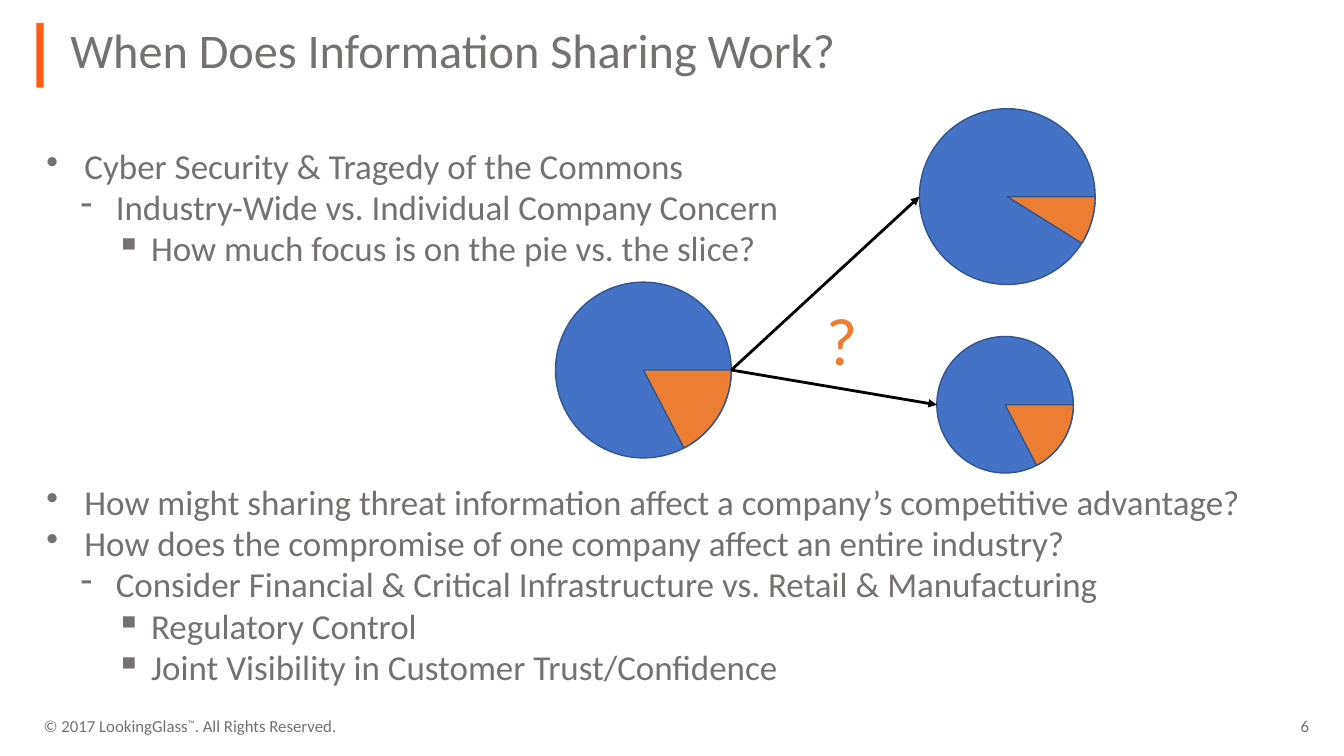
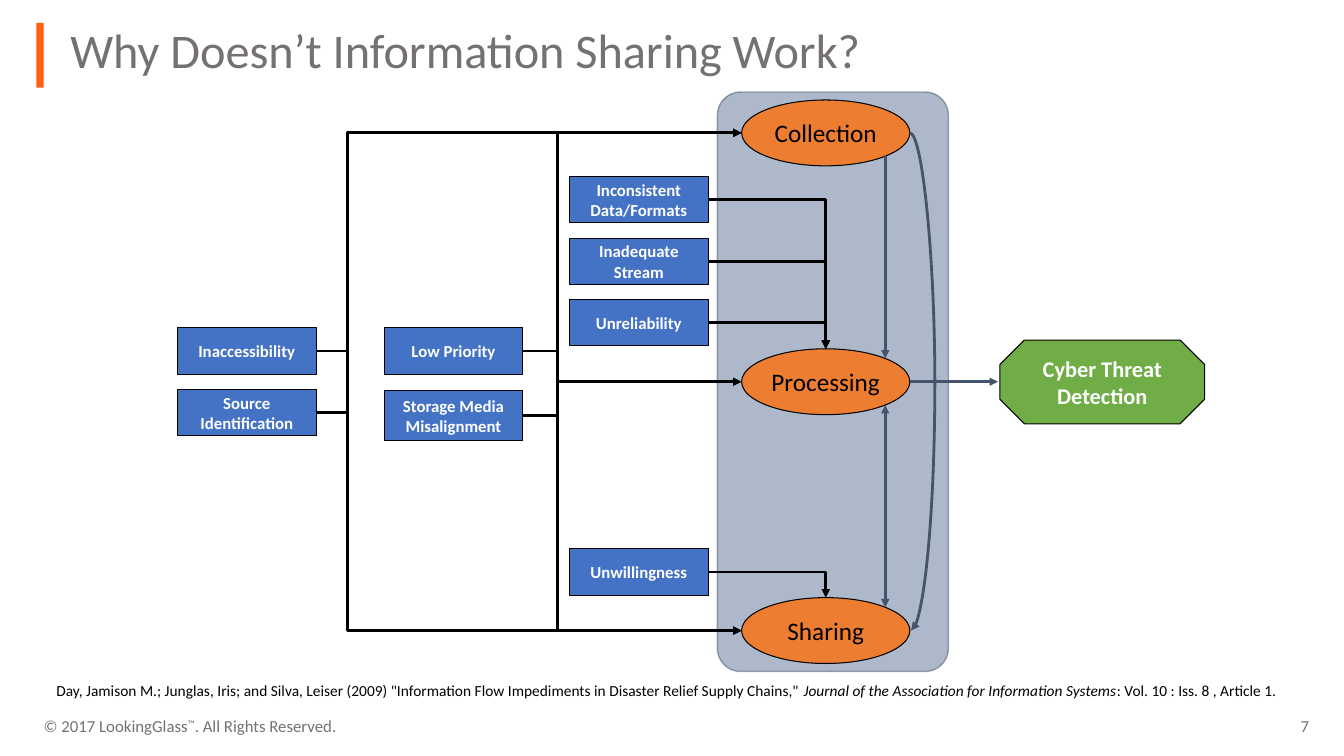
import math

from lxml import etree
from pptx import Presentation
from pptx.dml.color import RGBColor
from pptx.enum.shapes import MSO_CONNECTOR, MSO_SHAPE
from pptx.enum.text import MSO_ANCHOR, MSO_AUTO_SIZE, PP_ALIGN
from pptx.oxml.ns import qn
from pptx.util import Cm, Pt

RECT, ROUNDED, OVAL = MSO_SHAPE.RECTANGLE, MSO_SHAPE.ROUNDED_RECTANGLE, MSO_SHAPE.OVAL
PIE, OCTAGON = MSO_SHAPE.PIE, MSO_SHAPE.OCTAGON
STRAIGHT, ELBOW, CURVE = MSO_CONNECTOR.STRAIGHT, MSO_CONNECTOR.ELBOW, MSO_CONNECTOR.CURVE
LEFT, CENTER, RIGHT = PP_ALIGN.LEFT, PP_ALIGN.CENTER, PP_ALIGN.RIGHT
TOP, MIDDLE = MSO_ANCHOR.TOP, MSO_ANCHOR.MIDDLE
NO_AUTOSIZE = MSO_AUTO_SIZE.NONE

FONT = "Calibri"
COLORS = {
    "accent": "FF5D12", "gray": "767171", "blue": "4472C4", "blue_edge": "325491",
    "orange": "ED7D31", "green": "70AD47", "band": "ADB9CA", "slate": "44546A",
    "black": "000000", "white": "FFFFFF",
}
BULLETS = [("•", 0.96, -0.96), ("-", 1.75, -0.89), ("▪", 2.64, -0.89)]

COMMONS_POINTS = [
    (0, "Cyber Security & Tragedy of the Commons"),
    (1, "Industry-Wide vs. Individual Company Concern"),
    (2, "How much focus is on the pie vs. the slice?"),
]
IMPACT_POINTS = [
    (0, "How might sharing threat information affect a company’s competitive advantage?"),
    (0, "How does the compromise of one company affect an entire industry?"),
    (1, "Consider Financial & Critical Infrastructure vs. Retail & Manufacturing"),
    (2, "Regulatory Control"),
    (2, "Joint Visibility in Customer Trust/Confidence"),
]
CITATION = [
    ("Day, Jamison M.; Junglas, Iris; and Silva, Leiser (2009) \"Information Flow "
     "Impediments in Disaster Relief Supply Chains,\" ", False),
    ("Journal of the Association for Information Systems", True),
    (": Vol. 10 : Iss. 8 , Article 1.", False),
]


def rgb(name):
    """Return the named colour."""
    return RGBColor.from_string(COLORS[name])


def style(paragraph, size, color, bold=False, align=LEFT):
    """Format a whole paragraph."""
    paragraph.alignment = align
    font = paragraph.font
    font.name, font.size, font.bold = FONT, Pt(size), bold
    font.color.rgb = rgb(color)


def text_frame(slide, left, top, width, height, inset=None):
    """Add a wrapping text box and return its frame."""
    frame = slide.shapes.add_textbox(Cm(left), Cm(top), Cm(width), Cm(height)).text_frame
    frame.word_wrap = True
    if inset is not None:
        frame.margin_left = frame.margin_right = Cm(inset)
        frame.margin_top = frame.margin_bottom = Cm(inset)
    return frame


def add_shape(slide, kind, box, fill, edge=None, weight=0.75):
    """Add a flat preset shape in a box given in centimetres."""
    shape = slide.shapes.add_shape(kind, *map(Cm, box))
    shape.shadow.inherit = False
    shape.fill.solid()
    shape.fill.fore_color.rgb = rgb(fill)
    if edge:
        shape.line.color.rgb = rgb(edge)
        shape.line.width = Pt(weight)
    else:
        shape.line.fill.background()
    return shape


def add_node(slide, kind, box, fill, lines, size, color, bold=True):
    """Add a diagram shape with centred lines of text."""
    frame = add_shape(slide, kind, box, fill, "black").text_frame
    frame.word_wrap = False
    frame.vertical_anchor = MIDDLE
    for index, line in enumerate(lines):
        paragraph = frame.paragraphs[0] if index == 0 else frame.add_paragraph()
        paragraph.text = line
        style(paragraph, size, color, bold, CENTER)


def add_arrow(slide, start, end, color="black", kind=STRAIGHT, bend_x=None, both=False):
    """Draw an arrow; an elbow without bend_x turns one corner."""
    arrow = slide.shapes.add_connector(kind, *map(Cm, (*start, *end)))
    arrow.line.color.rgb = rgb(color)
    arrow.line.width = Pt(2)
    properties = arrow._element.spPr
    line = properties.find(qn("a:ln"))
    for tag in ["a:headEnd", "a:tailEnd"] if both else ["a:tailEnd"]:
        etree.SubElement(line, qn(tag), type="triangle")
    etree.SubElement(properties, qn("a:effectLst"))
    geometry = properties.find(qn("a:prstGeom"))
    if bend_x is not None:
        ratio = (bend_x - start[0]) / (end[0] - start[0])
        guides = geometry.find(qn("a:avLst"))
        if guides is None:
            guides = etree.SubElement(geometry, qn("a:avLst"))
        etree.SubElement(guides, qn("a:gd"), name="adj1", fmla=f"val {round(ratio * 100000)}")
    elif kind == ELBOW:
        geometry.set("prst", "bentConnector2")


def add_framed_slide(prs, title, number):
    """Add a slide with title, accent bar and footer."""
    slide = prs.slides.add_slide(prs.slide_layouts[5])
    add_shape(slide, RECT, (0.92, 0.58, 0.18, 1.63), "accent")

    heading = slide.shapes.title
    heading.left, heading.top, heading.width, heading.height = map(Cm, (1.52, 0.56, 31.72, 1.75))
    frame = heading.text_frame
    frame.text = title
    frame.auto_size = NO_AUTOSIZE
    frame.vertical_anchor = TOP
    frame.paragraphs[0].line_spacing = 0.9
    style(frame.paragraphs[0], 34.5, "gray")

    notice = text_frame(slide, 1.02, 17.96, 10, 0.61, 0.08).paragraphs[0]
    for text in ("© 2017 LookingGlass", "™", ". All Rights Reserved."):
        run = notice.add_run()
        run.text = text
        if text == "™":
            run._r.get_or_add_rPr().set("baseline", "30000")
    style(notice, 12, "gray")

    page = text_frame(slide, 28.5, 17.96, 4.57, 0.61, 0.08).paragraphs[0]
    page.text = str(number)
    style(page, 12, "gray", align=RIGHT)
    return slide


def add_bullets(slide, box, points):
    """Add a bulleted list of (level, text) points."""
    frame = text_frame(slide, *box)
    for index, (level, text) in enumerate(points):
        paragraph = frame.paragraphs[0] if index == 0 else frame.add_paragraph()
        paragraph.text = text
        paragraph.level = level
        mark, margin, indent = BULLETS[level]
        properties = paragraph._p.get_or_add_pPr()
        properties.set("marL", str(Cm(margin)))
        properties.set("indent", str(Cm(indent)))
        etree.SubElement(properties, qn("a:buChar"), char=mark)
        paragraph.line_spacing = 0.9
        paragraph.space_after = Pt(2.5)
        style(paragraph, 25, "gray")


def add_pie(slide, left, top, size, degrees):
    """Draw a disc with a slice that starts at three o'clock."""
    box = (left, top, size, size)
    add_shape(slide, OVAL, box, "blue", "blue_edge", 1)
    portion = add_shape(slide, PIE, box, "orange", "blue_edge", 1)
    portion.adjustments[0] = 0
    portion.adjustments[1] = degrees * 0.6


def add_pie_choice(slide, left, top):
    """Draw one pie leading to a larger pie or a larger slice."""
    large, small = 4.43, 3.44
    current_y, bigger_pie_x, smaller_pie_x, smaller_pie_y = 4.37, 9.17, 9.61, 5.74
    add_pie(slide, left, top + current_y, large, 62.5)
    add_pie(slide, left + bigger_pie_x, top, large, 32)
    add_pie(slide, left + smaller_pie_x, top + smaller_pie_y, small, 62.5)
    origin = (left + large, top + current_y + large / 2)
    add_arrow(slide, origin, (left + bigger_pie_x, top + large / 2))
    add_arrow(slide, origin, (left + smaller_pie_x, top + smaller_pie_y + small / 2))
    question = text_frame(slide, left + 6.58, top + 4.65, 1.68, 2.31).paragraphs[0]
    question.text = "?"
    style(question, 48, "orange")


def add_flow(slide, left, top):
    """Draw the impediments that act on the stages of threat detection."""
    band = add_shape(slide, ROUNDED, (left + 13.61, top, 5.82, 14.6), "band", "slate", 1)
    band.adjustments[0] = 0.1
    edge_color = band._element.spPr.find(qn("a:ln")).find(".//" + qn("a:srgbClr"))
    etree.SubElement(edge_color, qn("a:alpha"), val="50000")

    stage_x, stage_w, stage_h = left + 14.22, 4.24, 1.66
    center_x, stage_right = stage_x + stage_w / 2, stage_x + stage_w
    tops = [top + 0.2 + 6.27 * row for row in range(3)]
    for stage, stage_y in zip(("Collection", "Processing", "Sharing"), tops):
        add_node(slide, OVAL, (stage_x, stage_y, stage_w, stage_h), "orange",
                 [stage], 18, "black", False)
    collection_y, processing_y, sharing_y = [y + stage_h / 2 for y in tops]

    columns = [left, left + 5.21, left + 9.88]
    cause_w, cause_h = 3.5, 1.17
    causes = [
        (0, 5.94, cause_h, ["Inaccessibility"]),
        (0, 7.49, cause_h, ["Source", "Identification"]),
        (1, 5.94, cause_h, ["Low Priority"]),
        (1, 7.52, 1.27, ["Storage Media", "Misalignment"]),
        (2, 2.13, cause_h, ["Inconsistent", "Data/Formats"]),
        (2, 3.68, cause_h, ["Inadequate", "Stream"]),
        (2, 5.23, cause_h, ["Unreliability"]),
        (2, 11.51, cause_h, ["Unwillingness"]),
    ]
    exits = {}
    for column, offset, height, lines in causes:
        box = (columns[column], top + offset, cause_w, height)
        add_node(slide, RECT, box, "blue", lines, 12, "white")
        exits[lines[0]] = (columns[column] + cause_w, top + offset + height / 2)

    outer_bus, inner_bus = left + 4.29, left + 9.58
    for cause, bus, stage_y in (
        ("Inaccessibility", outer_bus, sharing_y),
        ("Source", outer_bus, collection_y),
        ("Low Priority", inner_bus, sharing_y),
        ("Low Priority", inner_bus, processing_y),
        ("Storage Media", inner_bus, collection_y),
    ):
        add_arrow(slide, exits[cause], (stage_x, stage_y), kind=ELBOW, bend_x=bus)
    for cause, stage_top in (
        ("Inconsistent", tops[1]), ("Inadequate", tops[1]),
        ("Unreliability", tops[1]), ("Unwillingness", tops[2]),
    ):
        add_arrow(slide, exits[cause], (center_x, stage_top), kind=ELBOW)

    detection_x = left + 20.73
    add_node(slide, OCTAGON, (detection_x, top + 6.25, 5.16, 2.11), "green",
             ["Cyber Threat", "Detection"], 16, "white")
    add_arrow(slide, (stage_right, processing_y), (detection_x - 0.05, processing_y), "slate")

    diagonal = math.sqrt(0.5)
    rim_x, rim_y = center_x + stage_w / 2 * diagonal, stage_h / 2 * diagonal
    add_arrow(slide, (rim_x, collection_y + rim_y), (rim_x, processing_y - rim_y), "slate")
    add_arrow(slide, (rim_x, sharing_y - rim_y), (rim_x, processing_y + rim_y), "slate", both=True)
    add_arrow(slide, (stage_right, collection_y), (stage_right + 0.03, sharing_y), "slate",
              CURVE, stage_right + 0.63)


def add_citation(slide, left, top):
    """Add the source line with the journal in italics."""
    paragraph = text_frame(slide, left, top, 31.6, 0.74).paragraphs[0]
    for text, italic in CITATION:
        run = paragraph.add_run()
        run.text = text
        run.font.italic = italic
    style(paragraph, 11, "black")


def main():
    """Build and save the presentation."""
    prs = Presentation()
    prs.slide_width, prs.slide_height = Cm(33.87), Cm(19.05)

    works = add_framed_slide(prs, "When Does Information Sharing Work?", 6)
    add_bullets(works, (0.92, 3.63, 20.5, 3.6), COMMONS_POINTS)
    add_bullets(works, (0.92, 12.1, 32.1, 5.7), IMPACT_POINTS)
    add_pie_choice(works, 14, 2.74)

    fails = add_framed_slide(prs, "Why Doesn’t Information Sharing Work?", 7)
    add_flow(fails, 4.47, 2.32)
    add_citation(fails, 1.17, 17.04)

    prs.save("out.pptx")


if __name__ == "__main__":
    main()
